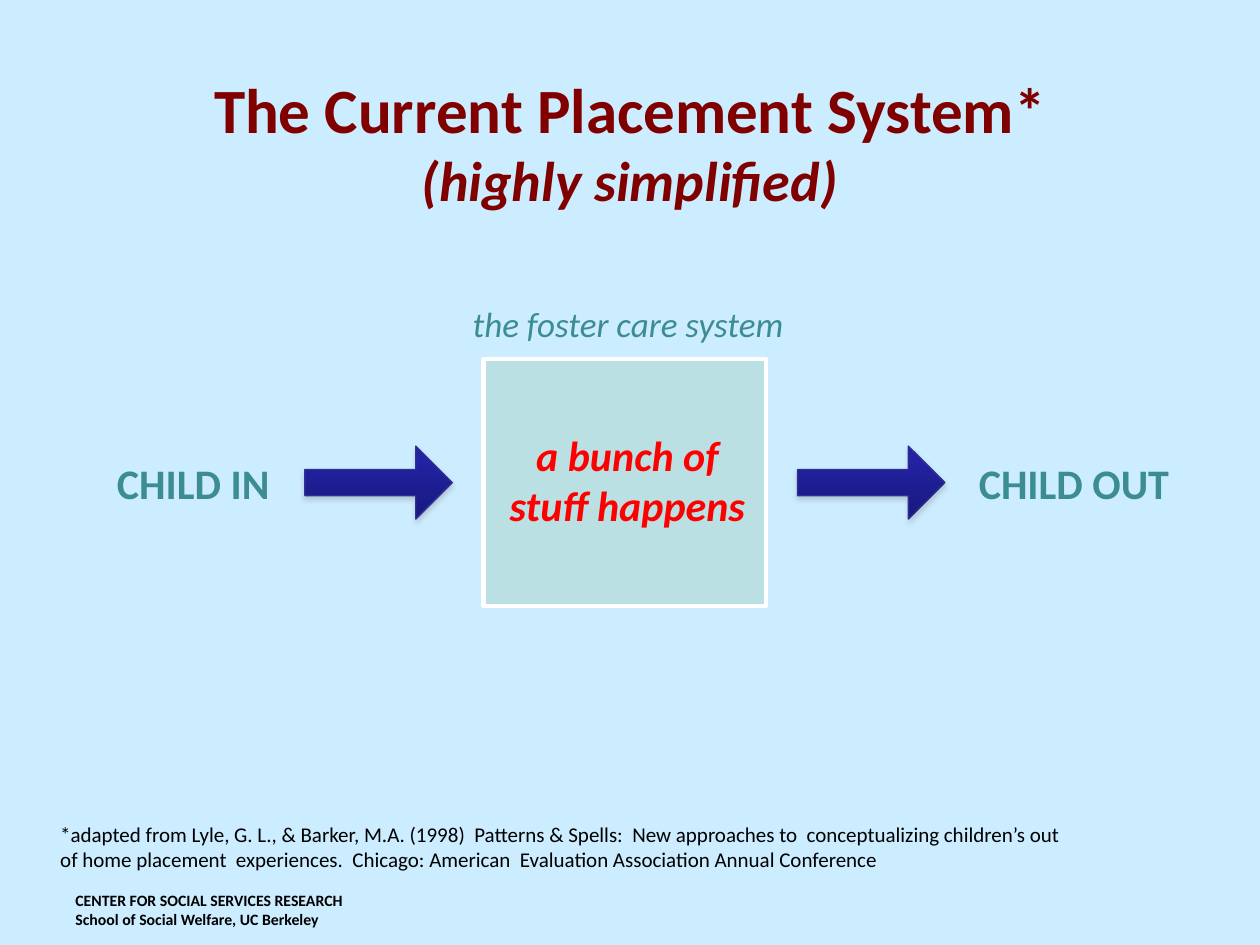
from dataclasses import dataclass

from lxml.etree import SubElement
from pptx import Presentation
from pptx.dml.color import RGBColor
from pptx.enum.shapes import MSO_SHAPE
from pptx.enum.text import MSO_ANCHOR, MSO_AUTO_SIZE, PP_ALIGN
from pptx.oxml.ns import qn
from pptx.util import Inches, Pt


@dataclass(frozen=True)
class Theme:
    """Colours, typeface and type sizes of the slide."""

    font: str = "Calibri"
    background: str = "CCECFF"
    title: str = "800000"
    label: str = "3C8C93"
    emphasis: str = "FF0000"
    text: str = "000000"
    box_fill: str = "BBE0E3"
    box_line: str = "FFFFFF"
    arrow_start: str = "2222A3"
    arrow_end: str = "18187C"
    arrow_line: str = "2F2F98"
    shadow: str = "808080"
    title_size: int = 36
    subtitle_size: int = 32
    label_size: int = 24
    caption_size: int = 20
    note_size: int = 12
    footer_size: int = 9


class SlideBuilder:
    """Draws styled elements on the current slide."""

    def __init__(self, presentation, theme):
        """Add a title-only slide with the theme background."""
        self.theme = theme
        self.slide = presentation.slides.add_slide(presentation.slide_layouts[5])
        fill = self.slide.background.fill
        fill.solid()
        fill.fore_color.rgb = RGBColor.from_string(theme.background)

    def style(self, font, size, color, bold=False, italic=False):
        """Set every font property used on the slide."""
        font.name = self.theme.font
        font.size = Pt(size)
        font.bold = bold
        font.italic = italic
        font.color.rgb = RGBColor.from_string(color)

    def title(self, heading, subheading, left, top, width, height):
        """Place the title with an italic second line."""
        shape = self.slide.shapes.title
        shape.left, shape.top = Inches(left), Inches(top)
        shape.width, shape.height = Inches(width), Inches(height)
        frame = shape.text_frame
        frame.auto_size = MSO_AUTO_SIZE.NONE
        frame.vertical_anchor = MSO_ANCHOR.MIDDLE
        paragraph = frame.paragraphs[0]
        paragraph.alignment = PP_ALIGN.CENTER
        first = paragraph.add_run()
        first.text = heading
        self.style(first.font, self.theme.title_size, self.theme.title, bold=True)
        paragraph.add_line_break()
        second = paragraph.add_run()
        second.text = subheading
        self.style(second.font, self.theme.subtitle_size, self.theme.title, True, True)

    def text(self, text, left, top, width, height, size, color,
             bold=False, italic=False, align=PP_ALIGN.LEFT, wrap=True):
        """Add a text box with one uniform paragraph."""
        shape = self.slide.shapes.add_textbox(
            Inches(left), Inches(top), Inches(width), Inches(height))
        frame = shape.text_frame
        frame.word_wrap = wrap
        paragraph = frame.paragraphs[0]
        paragraph.text = text
        paragraph.alignment = align
        self.style(paragraph.font, size, color, bold, italic)

    def box(self, left, top, width, height):
        """Add the outlined system box."""
        shape = self.slide.shapes.add_shape(
            MSO_SHAPE.RECTANGLE,
            Inches(left), Inches(top), Inches(width), Inches(height))
        shape.shadow.inherit = False
        shape.fill.solid()
        shape.fill.fore_color.rgb = RGBColor.from_string(self.theme.box_fill)
        shape.line.color.rgb = RGBColor.from_string(self.theme.box_line)
        shape.line.width = Pt(2.75)

    def arrow(self, left, top, width, height):
        """Add a gradient block arrow with a soft shadow."""
        shape = self.slide.shapes.add_shape(
            MSO_SHAPE.RIGHT_ARROW,
            Inches(left), Inches(top), Inches(width), Inches(height))
        shape.adjustments[0] = 0.36
        shape.shadow.inherit = False
        shape.fill.gradient()
        shape.fill.gradient_angle = 270
        stops = zip(shape.fill.gradient_stops, (0.2, 1),
                    (self.theme.arrow_start, self.theme.arrow_end))
        for stop, position, color in stops:
            stop.position = position
            stop.color.rgb = RGBColor.from_string(color)
        shape.line.color.rgb = RGBColor.from_string(self.theme.arrow_line)
        shape.line.width = Pt(0.75)
        self.add_shadow(shape)

    def add_shadow(self, shape):
        """Give the shape a translucent shadow below it."""
        effects = shape._element.spPr.find(qn("a:effectLst"))
        shadow = SubElement(
            effects, qn("a:outerShdw"), blurRad=str(Pt(3.1)), dist=str(Pt(1.8)),
            dir="5400000", rotWithShape="0")
        color = SubElement(shadow, qn("a:srgbClr"), val=self.theme.shadow)
        SubElement(color, qn("a:alpha"), val="35000")


def main():
    """Build and save the placement system slide."""
    presentation = Presentation()
    presentation.slide_width, presentation.slide_height = Inches(10), Inches(7.5)
    theme = Theme()
    builder = SlideBuilder(presentation, theme)

    builder.text("CENTER FOR SOCIAL SERVICES RESEARCH\vSchool of Social Welfare, UC Berkeley",
                 0.5, 7.02, 2.92, 0.4, theme.footer_size, theme.text, bold=True)
    builder.title("The Current Placement System*", "(highly simplified)", 0.5, 0.5, 9, 1.25)
    builder.text("*adapted from Lyle, G. L., & Barker, M.A. (1998)  Patterns & Spells:  "
                 "New approaches to  conceptualizing children’s out of home placement  "
                 "experiences.  Chicago: American  Evaluation Association Annual Conference",
                 0.38, 6.47, 8.17, 0.51, theme.note_size, theme.text)
    builder.box(3.84, 2.85, 2.24, 1.96)
    builder.text("a bunch of stuff happens", 3.86, 3.36, 2.24, 0.91, theme.label_size,
                 theme.emphasis, bold=True, italic=True, align=PP_ALIGN.CENTER)
    for label, left, width in (("CHILD IN", 0.83, 1.42), ("CHILD OUT", 7.67, 1.73)):
        builder.text(label, left, 3.58, width, 0.5, theme.label_size, theme.label,
                     bold=True, wrap=False)
    for left in (2.42, 6.33):
        builder.arrow(left, 3.54, 1.17, 0.58)
    builder.text("the foster care system", 3.15, 2.35, 3.67, 0.44, theme.caption_size,
                 theme.label, italic=True, align=PP_ALIGN.CENTER)

    presentation.save("out.pptx")


if __name__ == "__main__":
    main()
